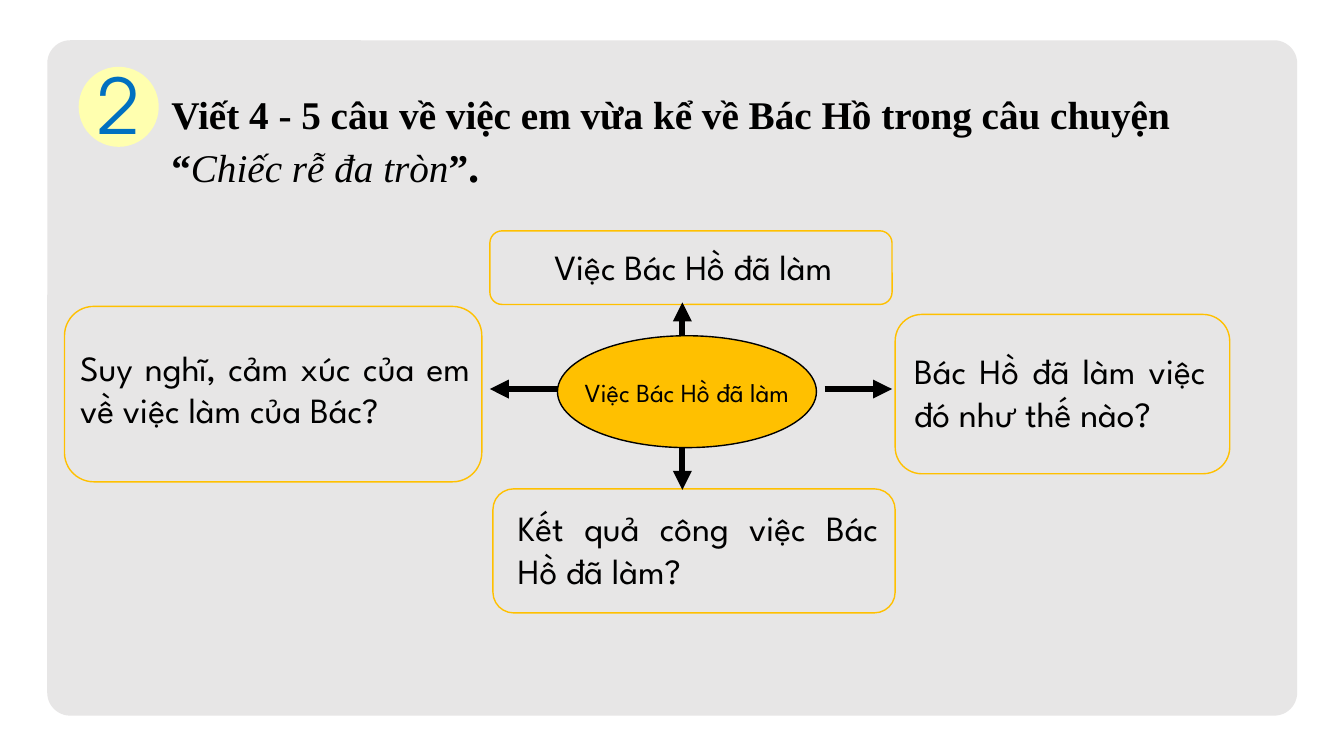
from lxml import etree
from pptx import Presentation
from pptx.dml.color import RGBColor
from pptx.enum.shapes import MSO_CONNECTOR, MSO_SHAPE
from pptx.enum.text import MSO_ANCHOR, PP_ALIGN
from pptx.oxml.ns import qn
from pptx.util import Pt

ROUND, OVAL = MSO_SHAPE.ROUNDED_RECTANGLE, MSO_SHAPE.OVAL
STRAIGHT = MSO_CONNECTOR.STRAIGHT
CENTER, JUSTIFY = PP_ALIGN.CENTER, PP_ALIGN.JUSTIFY
MIDDLE, TOP = MSO_ANCHOR.MIDDLE, MSO_ANCHOR.TOP

# Content: lengths in points
FONT = "League Spartan"
AMBER, BLACK = "FFC000", "000000"
# Each title line: (text, size, bold, italic) runs
TITLE = [
    [("Viết 4 - 5 câu về việc em vừa kể về Bác Hồ trong câu chuyện", 28, True, False)],
    [("“", 28, True, False), ("Chiếc rễ đa tròn", 28, False, True),
     ("”", 28, True, False), (".", 32, True, False)],
]
# Idea boxes: text, (left, top, width, height), alignment, (left, right, bottom) margins
IDEAS = [
    ("Suy nghĩ, cảm xúc của em về việc làm của Bác?",
     (46.1, 218.9, 298.1, 125.3), JUSTIFY, (5, 2, 8)),
    ("Bác Hồ đã làm việc đó như thế nào?",
     (639.4, 224.6, 239, 113.8), JUSTIFY, (8, 11.5, 3.6)),
    ("Kết quả công việc Bác Hồ đã làm?",
     (352.1, 349.2, 287.3, 88.6), JUSTIFY, (13.4, 7.6, 3)),
    ("Việc Bác Hồ đã làm",
     (349.9, 164.9, 287.3, 52.6), CENTER, (9, 5.5, 1.5)),
]
ARROWS = [  # x1, y1, x2, y2: right, left, down, up
    (589, 277.9, 637.2, 277.9),
    (400.3, 277.9, 349.9, 277.9),
    (487.4, 316.8, 487.4, 349.9),
    (487.4, 247.7, 487.4, 216),
]


def color(code):
    return RGBColor.from_string(code)


def add_box(kind, box, fill=None, line=None):
    sp = s.shapes.add_shape(kind, *map(Pt, box))
    sp.shadow.inherit = False
    if fill:
        sp.fill.solid()
        sp.fill.fore_color.rgb = color(fill)
    else:
        sp.fill.background()
    if line:
        sp.line.color.rgb = color(line)
        sp.line.width = Pt(1)
    else:
        sp.line.fill.background()
    return sp


def set_margins(tf, left=0, right=0, bottom=0, top=0):
    tf.margin_left, tf.margin_right = Pt(left), Pt(right)
    tf.margin_bottom, tf.margin_top = Pt(bottom), Pt(top)


def write(sp, text, size, font=FONT, ink=BLACK, align=CENTER, margins=(), wrap=True):
    tf = sp.text_frame
    tf.word_wrap = wrap
    tf.vertical_anchor = MIDDLE
    set_margins(tf, *margins)
    p = tf.paragraphs[0]
    p.text = text
    p.alignment = align
    p.font.name, p.font.size = font, Pt(size)
    p.font.color.rgb = color(ink)


def add_arrow(x1, y1, x2, y2):
    cn = s.shapes.add_connector(STRAIGHT, Pt(x1), Pt(y1), Pt(x2), Pt(y2))
    cn.line.color.rgb = color(BLACK)
    cn.line.width = Pt(4.5)
    etree.SubElement(cn.line._get_or_add_ln(), qn("a:tailEnd"), type="triangle")
    etree.SubElement(cn._element.spPr, qn("a:effectLst"))


prs = Presentation()
prs.slide_width, prs.slide_height = Pt(960), Pt(540)
s = prs.slides.add_slide(prs.slide_layouts[5])

# Grey panel, placed behind the title
panel = add_box(ROUND, (33.8, 28.8, 892.8, 482.4), fill="E7E6E6")
panel.adjustments[0] = 0.034
s.shapes._spTree.insert(2, panel._element)

# Exercise number
badge = add_box(OVAL, (56.2, 47.7, 57.2, 57.2), fill="FFFFAF")
write(badge, "2", 54.5, "TeX Gyre Adventor", "0070C0", margins=(0, 0, 4), wrap=False)

# Title
title = s.shapes.title
title.left, title.top, title.width, title.height = map(Pt, (115.2, 61.2, 811.4, 79.9))
tf = title.text_frame
tf.word_wrap = True
tf.vertical_anchor = TOP
set_margins(tf, 7.2, 7.2, 3.6, 3.6)
for i, runs in enumerate(TITLE):
    p = tf.add_paragraph() if i else tf.paragraphs[0]
    p.alignment = JUSTIFY
    p.font.name = "Times New Roman"
    p.font.color.rgb = color(BLACK)
    for text, size, bold, italic in runs:
        r = p.add_run()
        r.text = text
        r.font.name = "Times New Roman"
        r.font.size = Pt(size)
        r.font.bold, r.font.italic = bold, italic

# Idea boxes around the centre
for text, box, align, margins in IDEAS:
    write(add_box(ROUND, box, line=AMBER), text, 25.3, align=align, margins=margins)

# Arrows and central topic
for ends in ARROWS:
    add_arrow(*ends)
topic = add_box(OVAL, (398.2, 239.8, 185, 79.9), fill=AMBER, line=BLACK)
write(topic, "Việc Bác Hồ đã làm", 18.6, wrap=False)

prs.save("out.pptx")
